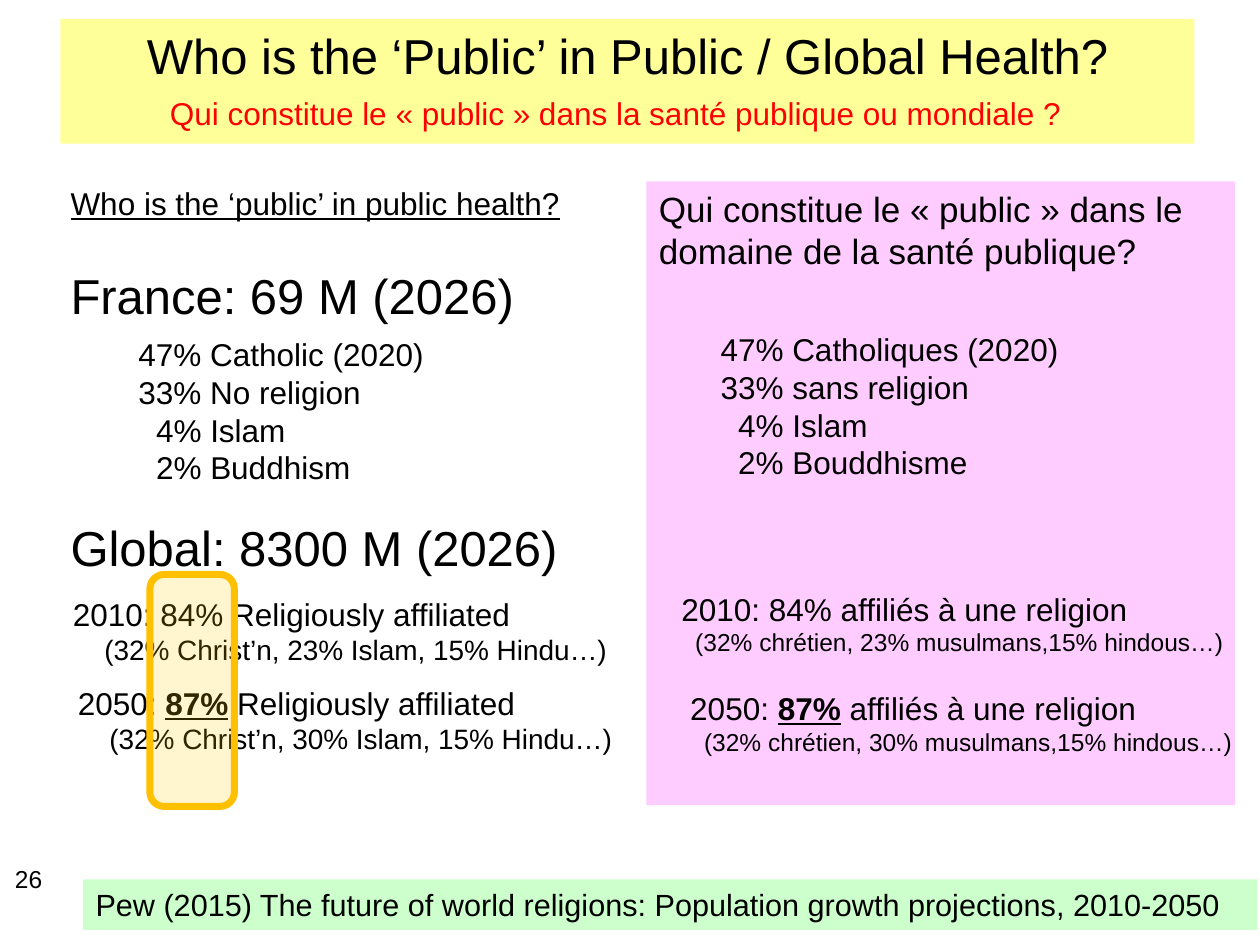
"""Build a bilingual slide on religion and the public in public health."""
import dataclasses

import lxml.etree
import pptx
import pptx.dml.color
import pptx.enum.shapes
import pptx.enum.text
import pptx.oxml.ns
import pptx.util

Inches = pptx.util.Inches
Pt = pptx.util.Pt
Align = pptx.enum.text.PP_ALIGN


@dataclasses.dataclass(frozen=True)
class Theme:
    font: str = "Arial"
    text: str = "000000"
    accent: str = "FF0000"
    title_fill: str = "FFFF99"
    french_fill: str = "FFCCFF"
    source_fill: str = "CCFFCC"
    highlight_fill: str = "FFCC00"
    highlight_line: str = "FFC000"
    headline: float = 28
    question: float = 20
    normal: float = 18
    source: float = 17.5
    detail: float = 16
    small: float = 14


THEME = Theme()


def rgb(value):
    return pptx.dml.color.RGBColor.from_string(value)


def paint(shape, color):
    shape.fill.solid()
    shape.fill.fore_color.rgb = rgb(color)


def place(shape, left, top, width, height):
    shape.left, shape.top = Inches(left), Inches(top)
    shape.width, shape.height = Inches(width), Inches(height)


def style(paragraph, size, color=THEME.text, indent=0, before=0, align=Align.LEFT):
    properties = paragraph._p.get_or_add_pPr()
    properties.set("marL", str(Inches(indent)))
    properties.set("indent", "0")
    lxml.etree.SubElement(properties, pptx.oxml.ns.qn("a:buNone"))
    paragraph.alignment = align
    paragraph.space_before = Pt(before)
    paragraph.font.name = THEME.font
    paragraph.font.size = Pt(size)
    paragraph.font.color.rgb = rgb(color)


def write(shape, lines):
    """Write (text, style options) lines into a shape and return its paragraphs."""
    frame = shape.text_frame
    frame.word_wrap = True
    frame.auto_size = pptx.enum.text.MSO_AUTO_SIZE.NONE
    frame.vertical_anchor = pptx.enum.text.MSO_ANCHOR.TOP
    frame.text = "\n".join(text for text, options in lines)
    for paragraph, (text, options) in zip(frame.paragraphs, lines):
        style(paragraph, **options)
    return frame.paragraphs


def add_text(slide, box, lines, fill=None):
    shape = slide.shapes.add_textbox(*map(Inches, box))
    if fill:
        paint(shape, fill)
    return write(shape, lines)


def fill_placeholder(shape, box, lines, fill=None):
    place(shape, *box)
    if fill:
        paint(shape, fill)
    return write(shape, lines)


def add_shares(slide, box, shares):
    """List shares, setting single-digit ones in to line up the percent signs."""
    lines = [(f"{share}% {label}",
              {"size": THEME.normal, "indent": 0 if share > 9 else 0.14})
             for share, label in shares]
    add_text(slide, box, lines)


def add_projection(slide, box, year, share, label, detail, size, indent, strong=False):
    lines = [("", {"size": THEME.normal}),
             (detail, {"size": size, "indent": indent})]
    headline = add_text(slide, box, lines)[0]
    for text in (f"{year}: ", f"{share}%", f" {label}"):
        run = headline.add_run()
        run.text = text
        if strong and text.endswith("%"):
            run.font.bold = run.font.underline = True


def add_highlight(slide, box):
    shape = slide.shapes.add_shape(
        pptx.enum.shapes.MSO_SHAPE.ROUNDED_RECTANGLE, *map(Inches, box))
    shape.shadow.inherit = False
    paint(shape, THEME.highlight_fill)
    color = shape._element.spPr.find(".//" + pptx.oxml.ns.qn("a:srgbClr"))
    lxml.etree.SubElement(color, pptx.oxml.ns.qn("a:alpha"), val="19000")
    shape.line.color.rgb = rgb(THEME.highlight_line)
    shape.line.width = Pt(4)


def main():
    presentation = pptx.Presentation()
    presentation.slide_width, presentation.slide_height = Inches(10), Inches(7.5)
    slide = presentation.slides.add_slide(presentation.slide_layouts[3])
    title, english, french = slide.placeholders

    fill_placeholder(title, (0.48, 0.15, 9, 0.99), [
        ("Who is the ‘Public’ in Public / Global Health?",
         {"size": THEME.headline, "align": Align.CENTER})], THEME.title_fill)
    question = fill_placeholder(english, (0.46, 1.41, 4.42, 5.6), [
        ("Who is the ‘public’ in public health?", {"size": THEME.normal}),
        ("France: 69 M (2026)", {"size": THEME.headline, "before": 25}),
        ("Global: 8300 M (2026)", {"size": THEME.headline, "before": 110.5})])[0]
    question.font.underline = True
    fill_placeholder(french, (5.13, 1.44, 4.67, 4.95), [
        ("Qui constitue le « public » dans le domaine de la santé publique?",
         {"size": THEME.question})], THEME.french_fill)

    add_text(slide, (0.02, 6.81, 2.33, 0.52), [("26", {"size": THEME.small})])
    add_shares(slide, (1, 2.61, 2.5, 1.31), [
        (47, "Catholic (2020)"), (33, "No religion"), (4, "Islam"), (2, "Buddhism")])
    add_shares(slide, (5.62, 2.57, 3.29, 1.31), [
        (47, "Catholiques (2020)"), (33, "sans religion"),
        (4, "Islam"), (2, "Bouddhisme")])

    for year, share, islam, english_at, french_at in (
            (2010, 84, 23, (0.48, 4.67), (5.31, 4.63)),
            (2050, 87, 30, (0.52, 5.38), (5.38, 5.42))):
        strong = year == 2050
        add_projection(slide, (*english_at, 4.67, 0.67), year, share,
                       "Religiously affiliated",
                       f"(32% Christ’n, {islam}% Islam, 15% Hindu…)",
                       THEME.detail, 0.25, strong)
        add_projection(slide, (*french_at, 4.67, 0.64), year, share,
                       "affiliés à une religion",
                       f"(32% chrétien, {islam}% musulmans,15% hindous…)",
                       THEME.small, 0.11, strong)

    add_text(slide, (0.66, 6.98, 9.32, 0.4), [
        ("Pew (2015) The future of world religions: "
         "Population growth projections, 2010-2050",
         {"size": THEME.source})], THEME.source_fill)
    add_text(slide, (1.25, 0.7, 7.67, 0.4), [
        ("Qui constitue le « public » dans la santé publique ou mondiale ?",
         {"size": THEME.normal, "color": THEME.accent})])
    add_highlight(slide, (1.19, 4.56, 0.67, 1.84))
    presentation.save("out.pptx")


if __name__ == "__main__":
    main()
